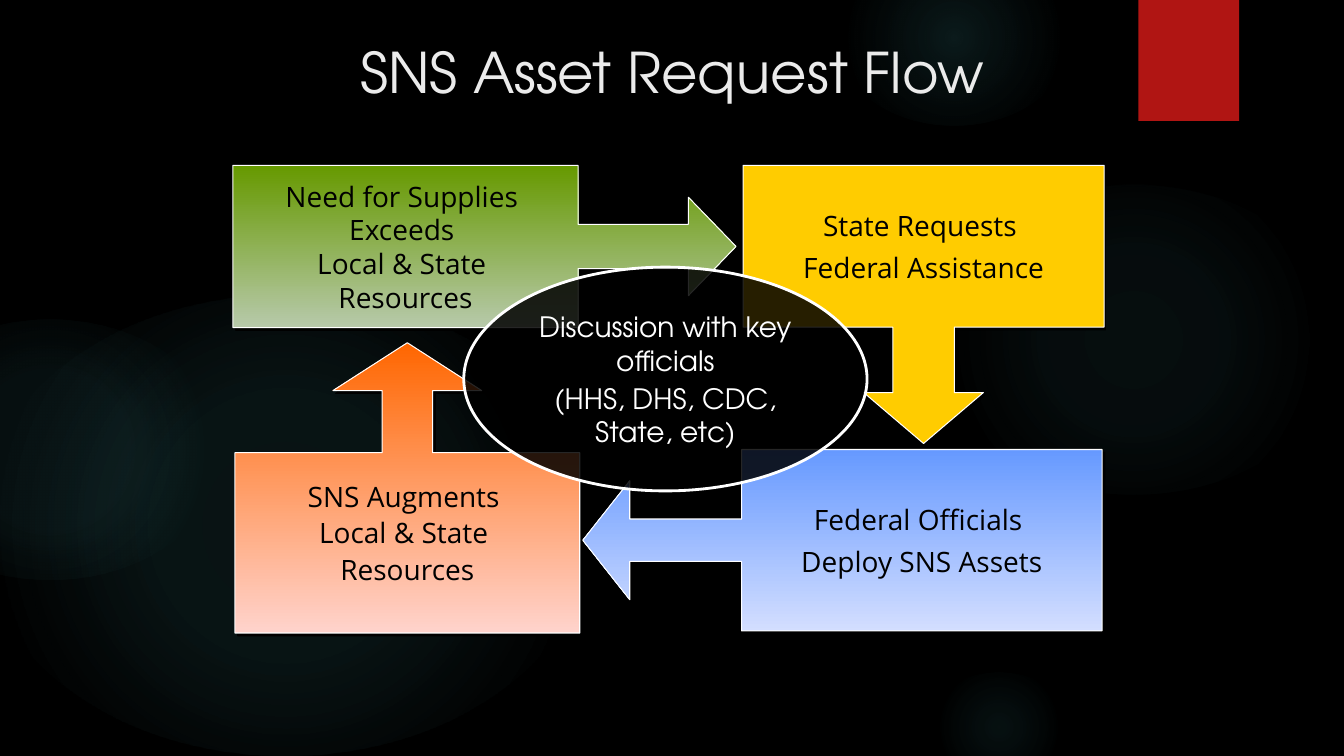
from lxml import etree
from pptx import Presentation
from pptx import util as u
from pptx.dml.color import RGBColor
from pptx.enum import shapes, text
from pptx.oxml import ns

BLACK = RGBColor(0x00, 0x00, 0x00)
WHITE = RGBColor(0xFF, 0xFF, 0xFF)
TITLE_GREY = RGBColor(0xEB, 0xEB, 0xEB)
RED = RGBColor(0xB0, 0x15, 0x13)
TEAL = RGBColor(0x50, 0xB9, 0xC1)
YELLOW = RGBColor(0xFF, 0xCC, 0x00)
GREEN, PALE_GREEN = RGBColor(0x66, 0x99, 0x00), RGBColor(0xB7, 0xC9, 0xAA)
ORANGE, PALE_ORANGE = RGBColor(0xFF, 0x66, 0x00), RGBColor(0xFF, 0xD3, 0xCC)
BLUE, PALE_BLUE = RGBColor(0x66, 0x99, 0xFF), RGBColor(0xD3, 0xDE, 0xFF)
BODY_FONT = "Open Sans"
HEAD_FONT = "TeX Gyre Adventor"
KIND = shapes.MSO_SHAPE

GLOWS = [
    ((9.19, 1.83, 4.11, 3.08), ((0, 7), (36, 6), (69, 0))),
    ((8.3, -0.5, 2.33, 1.75), ((0, 14), (36, 7), (73, 0))),
    ((9.19, 6.67, 1.44, 1.08), ((0, 9), (36, 5), (66, 0))),
    ((-0.22, 2.92, 6.11, 4.58), ((0, 11), (36, 10), (75, 0))),
    ((-1.22, 3.17, 3.44, 2.58), ((0, 8), (36, 8), (72, 0))),
]

CALLOUTS = [
    dict(kind=KIND.DOWN_ARROW_CALLOUT, at=(5.06, 0, 3.58, 2.76),
         adj=(0.221, 0.215, 0.183, 0.582), colors=(YELLOW,), shadow=(2.2, 63),
         lines=("State Requests ", "Federal Assistance"), before=6),
    dict(kind=KIND.RIGHT_ARROW_CALLOUT, at=(0, 0, 4.99, 1.61),
         adj=(0.273, 0.303, 0.293, 0.686), colors=(GREEN, PALE_GREEN), shadow=(2.8, 45),
         lines=("Need for Supplies ", "Exceeds ", "Local & State ", "Resources"), before=0),
    dict(kind=KIND.UP_ARROW_CALLOUT, at=(0.02, 1.76, 3.42, 2.88),
         adj=(0.174, 0.256, 0.165, 0.621), colors=(ORANGE, PALE_ORANGE), shadow=(2.8, 45),
         lines=("SNS Augments ", "Local & State ", "Resources"), before=2, bottom=0.25),
    dict(kind=KIND.LEFT_ARROW_CALLOUT, at=(3.47, 2.82, 5.15, 1.8),
         adj=(0.234, 0.328, 0.259, 0.694), colors=(BLUE, PALE_BLUE), shadow=(2.8, 45),
         lines=("Federal Officials ", "Deploy SNS Assets"), before=6),
]


def child(parent, tag, **attrs):
    node = etree.SubElement(parent, ns.qn(tag))
    for name, value in attrs.items():
        node.set(name, str(value))
    return node


def color_node(parent, color, alpha):
    node = child(parent, "a:srgbClr", val=color)
    child(node, "a:alpha", val=alpha * 1000)


def add_shape(s, kind, box):
    sp = s.shapes.add_shape(kind, *map(u.Inches, box))
    sp.shadow.inherit = False
    sp.line.fill.background()
    return sp


def outline(sp, width):
    sp.line.color.rgb = WHITE
    sp.line.width = u.Pt(width)


def add_shadow(sp, alpha, blur, distance, angle):
    effects = sp._element.spPr.find(ns.qn("a:effectLst"))
    node = child(effects, "a:outerShdw", blurRad=u.Pt(blur), dist=u.Pt(distance),
                 dir=angle * 60000, algn="ctr", rotWithShape=0)
    color_node(node, BLACK, alpha)


def write(sp, lines, font, color, size=20, wrap=True, **paragraph_format):
    tf = sp.text_frame
    tf.word_wrap = wrap
    tf.vertical_anchor = text.MSO_ANCHOR.MIDDLE
    for i, line in enumerate(lines):
        p = tf.paragraphs[0] if i == 0 else tf.add_paragraph()
        p.alignment = text.PP_ALIGN.CENTER
        for name, value in paragraph_format.items():
            setattr(p, name, value)
        r = p.add_run()
        r.text = line
        for name, value in dict(name=font, size=u.Pt(size)).items():
            setattr(r.font, name, value)
        r.font.color.rgb = color


def add_glow(s, box, stops):
    sp = add_shape(s, KIND.OVAL, box)
    sp.fill.background()
    none = sp._element.spPr.find(ns.qn("a:noFill"))
    grad = etree.Element(ns.qn("a:gradFill"))
    stop_list = child(grad, "a:gsLst")
    for position, alpha in stops:
        color_node(child(stop_list, "a:gs", pos=position * 1000), TEAL, alpha)
    circle = child(grad, "a:path", path="circle")
    child(circle, "a:fillToRect", l=50000, t=50000, r=50000, b=50000)
    none.getparent().replace(none, grad)


def add_backdrop(s):
    s.background.fill.solid()
    s.background.fill.fore_color.rgb = BLACK
    for box, stops in GLOWS:
        add_glow(s, box, stops)


def add_ribbon(s, box):
    sp = add_shape(s, KIND.RECTANGLE, box)
    sp.fill.solid()
    sp.fill.fore_color.rgb = RED
    add_shadow(sp, 45, 3, 2, 90)


def add_title(s, box):
    sp = s.shapes.add_textbox(*map(u.Inches, box))
    write(sp, ["SNS Asset Request Flow"], HEAD_FONT, TITLE_GREY, size=40)


def add_callout(s, box, step):
    sp = add_shape(s, step["kind"], box)
    for i, value in enumerate(step["adj"]):
        sp.adjustments[i] = value
    colors = step["colors"]
    if len(colors) == 1:
        sp.fill.solid()
        sp.fill.fore_color.rgb = colors[0]
    else:
        sp.fill.gradient()
        sp.fill.gradient_angle = 270
        for stop, color, position in zip(sp.fill.gradient_stops, colors, (0, 1)):
            stop.color.rgb = color
            stop.position = position
    outline(sp, 0.75)
    add_shadow(sp, 100, 0, *step["shadow"])
    write(sp, step["lines"], BODY_FONT, BLACK, wrap=False,
          space_before=u.Pt(step["before"]), line_spacing=u.Pt(24))
    sp.text_frame.margin_bottom = u.Inches(step.get("bottom", 0.05))


def add_discussion(s, box):
    sp = add_shape(s, KIND.OVAL, box)
    sp.fill.solid()
    sp.fill.fore_color.rgb = BLACK
    fill_color = sp._element.spPr.find(ns.qn("a:solidFill"))[0]
    child(fill_color, "a:alpha", val=85000)
    outline(sp, 2)
    write(sp, ["Discussion with key officials", "(HHS, DHS, CDC, State, etc)"],
          HEAD_FONT, WHITE, space_before=u.Pt(3))


def add_flow(s, left, top):
    for step in CALLOUTS:
        x, y, w, h = step["at"]
        add_callout(s, (left + x, top + y, w, h), step)
    add_discussion(s, (left + 2.29, top + 1.01, 4, 2.22))


def main():
    prs = Presentation()
    prs.slide_width, prs.slide_height = u.Inches(13.33), u.Inches(7.5)
    s = prs.slides.add_slide(prs.slide_layouts[6])
    add_backdrop(s)
    add_ribbon(s, (11.29, 0, 1, 1.2))
    add_title(s, (1.67, 0.32, 10, 0.77))
    add_flow(s, 2.31, 1.64)
    prs.save("out.pptx")


if __name__ == "__main__":
    main()
